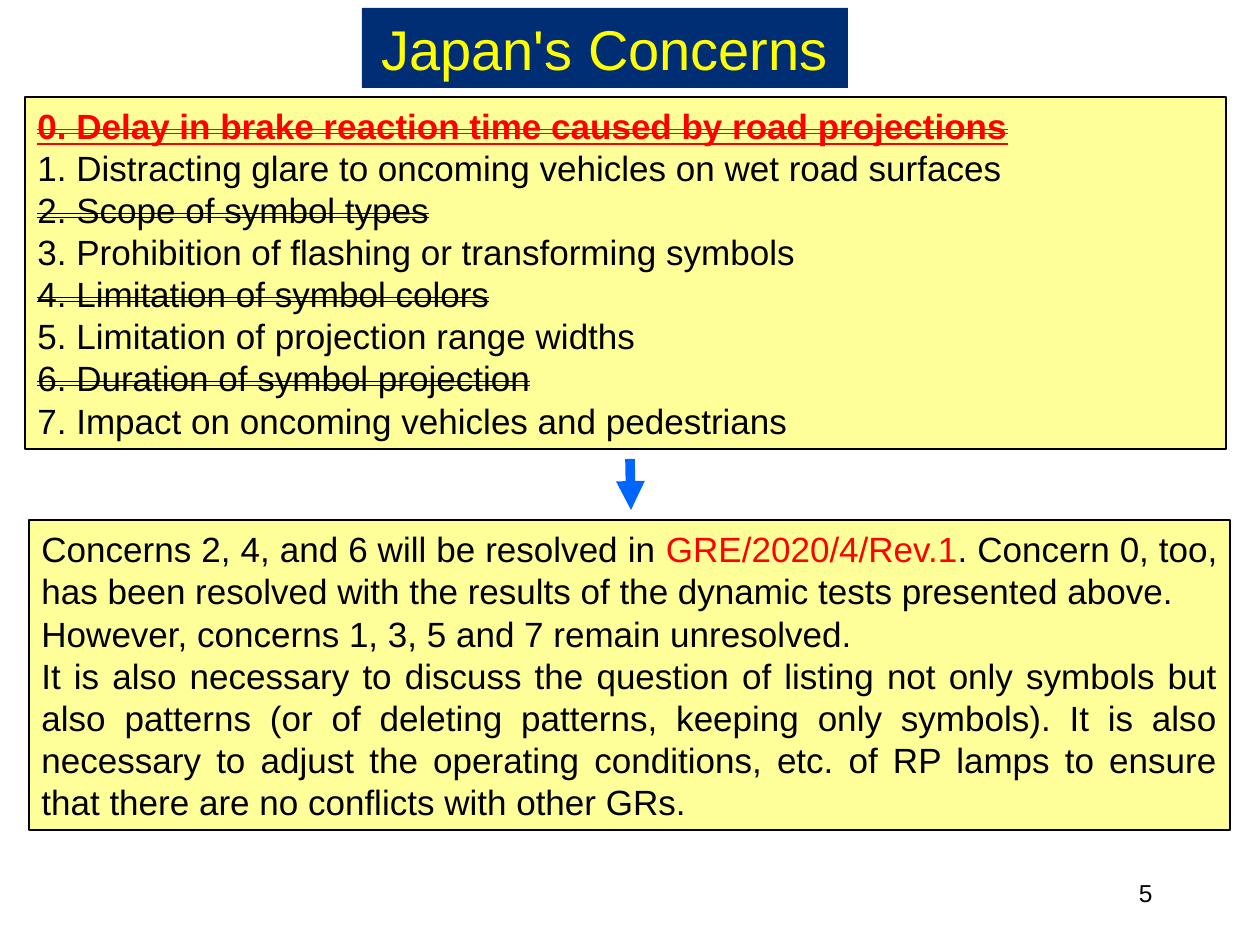
from lxml import etree
from pptx import Presentation
from pptx.dml.color import RGBColor
from pptx.enum.shapes import MSO_CONNECTOR, MSO_SHAPE
from pptx.enum.text import MSO_ANCHOR, MSO_AUTO_SIZE, PP_ALIGN
from pptx.oxml.ns import qn
from pptx.util import Emu, Pt

PX = 914400 / 126
FONT = "Arial"
COLORS = {
    "navy": "002E74",
    "title": "FFFF00",
    "panel": "FFFF99",
    "text": "000000",
    "accent": "FF0000",
    "arrow": "0066FF",
}
LEFT, CENTER, RIGHT, JUSTIFY = (
    PP_ALIGN.LEFT, PP_ALIGN.CENTER, PP_ALIGN.RIGHT, PP_ALIGN.JUSTIFY)
MIDDLE = MSO_ANCHOR.MIDDLE
NO_AUTOSIZE = MSO_AUTO_SIZE.NONE
RECTANGLE = MSO_SHAPE.RECTANGLE
STRAIGHT = MSO_CONNECTOR.STRAIGHT

# Each concern: wording, whether it is struck out
CONCERNS = [
    ("0. Delay in brake reaction time caused by road projections", True),
    ("1. Distracting glare to oncoming vehicles on wet road surfaces", False),
    ("2. Scope of symbol types", True),
    ("3. Prohibition of flashing or transforming symbols", False),
    ("4. Limitation of symbol colors", True),
    ("5. Limitation of projection range widths", False),
    ("6. Duration of symbol projection", True),
    ("7. Impact on oncoming vehicles and pedestrians", False),
]
# Each paragraph: spans of wording and color
CONCLUSIONS = [
    [("Concerns 2, 4, and 6 will be resolved in ", "text"),
     ("GRE/2020/4/Rev.1", "accent"),
     (". Concern 0, too, has been resolved with the results of the dynamic "
      "tests presented above.", "text")],
    [("However, concerns 1, 3, 5 and 7 remain unresolved.", "text")],
    [("It is also necessary to discuss the question of listing not only "
      "symbols but also patterns (or of deleting patterns, keeping only "
      "symbols). It is also necessary to adjust the operating conditions, "
      "etc. of RP lamps to ensure that there are no conflicts with other "
      "GRs.", "text")],
]


def px(value):
    return Emu(round(value * PX))


def color(name):
    return RGBColor.from_string(COLORS[name])


def style_span(span, size, color_name):
    span.font.name = FONT
    span.font.size = Pt(size)
    span.font.color.rgb = color(color_name)


def strike(span):
    span.font._element.set("strike", "dblStrike")


def add_title(page, box):
    title = page.shapes.title
    title.left, title.top, title.width, title.height = map(px, box)
    title.fill.solid()
    title.fill.fore_color.rgb = color("navy")
    frame = title.text_frame
    frame.text = "Japan's Concerns"
    frame.auto_size = NO_AUTOSIZE
    frame.vertical_anchor = MIDDLE
    para = frame.paragraphs[0]
    para.alignment = CENTER
    style_span(para.runs[0], 32, "title")


def add_panel(page, box, paragraphs, alignment):
    panel = page.shapes.add_shape(RECTANGLE, *map(px, box))
    panel.shadow.inherit = False
    panel.fill.solid()
    panel.fill.fore_color.rgb = color("panel")
    panel.line.color.rgb = color("text")
    panel.line.width = Pt(0.75)
    frame = panel.text_frame
    frame.word_wrap = True
    frame.vertical_anchor = MIDDLE
    for index, spans in enumerate(paragraphs):
        para = frame.add_paragraph() if index else frame.paragraphs[0]
        para.alignment = alignment
        para.line_spacing = Pt(24)
        for wording, color_name in spans:
            span = para.add_run()
            span.text = wording
            style_span(span, 20, color_name)
    return frame


def add_concerns(page, box):
    frame = add_panel(page, box, [[(words, "text")] for words, _ in CONCERNS], LEFT)
    spans = [para.runs[0] for para in frame.paragraphs]
    for span, (_, resolved) in zip(spans, CONCERNS):
        if resolved:
            strike(span)
    # The first concern stands out
    first = spans[0].font
    first.bold = first.underline = True
    first.color.rgb = color("accent")


def add_arrow(page, box):
    left, top, width, height = box
    arrow = page.shapes.add_connector(
        STRAIGHT, px(left), px(top), px(left + width), px(top + height))
    arrow.line.color.rgb = color("arrow")
    arrow.line.width = Pt(5.5)
    etree.SubElement(arrow.line._get_or_add_ln(), qn("a:tailEnd"), type="triangle")
    etree.SubElement(arrow._element.spPr, qn("a:effectLst"))


def add_page_number(page, box):
    number = page.shapes.add_textbox(*map(px, box))
    frame = number.text_frame
    frame.text = "5"
    frame.word_wrap = True
    frame.vertical_anchor = MIDDLE
    para = frame.paragraphs[0]
    para.alignment = RIGHT
    style_span(para.runs[0], 14, "text")


def main():
    deck = Presentation()
    deck.slide_width, deck.slide_height = px(1260), px(945)
    page = deck.slides.add_slide(deck.slide_layouts[5])
    add_title(page, (362, 8, 486, 80))
    add_concerns(page, (25, 97, 1201, 352))
    add_arrow(page, (630, 459, 1, 51))
    add_panel(page, (29, 520, 1201, 310), CONCLUSIONS, JUSTIFY)
    add_page_number(page, (903, 861, 262, 63))
    deck.save("out.pptx")


if __name__ == "__main__":
    main()
